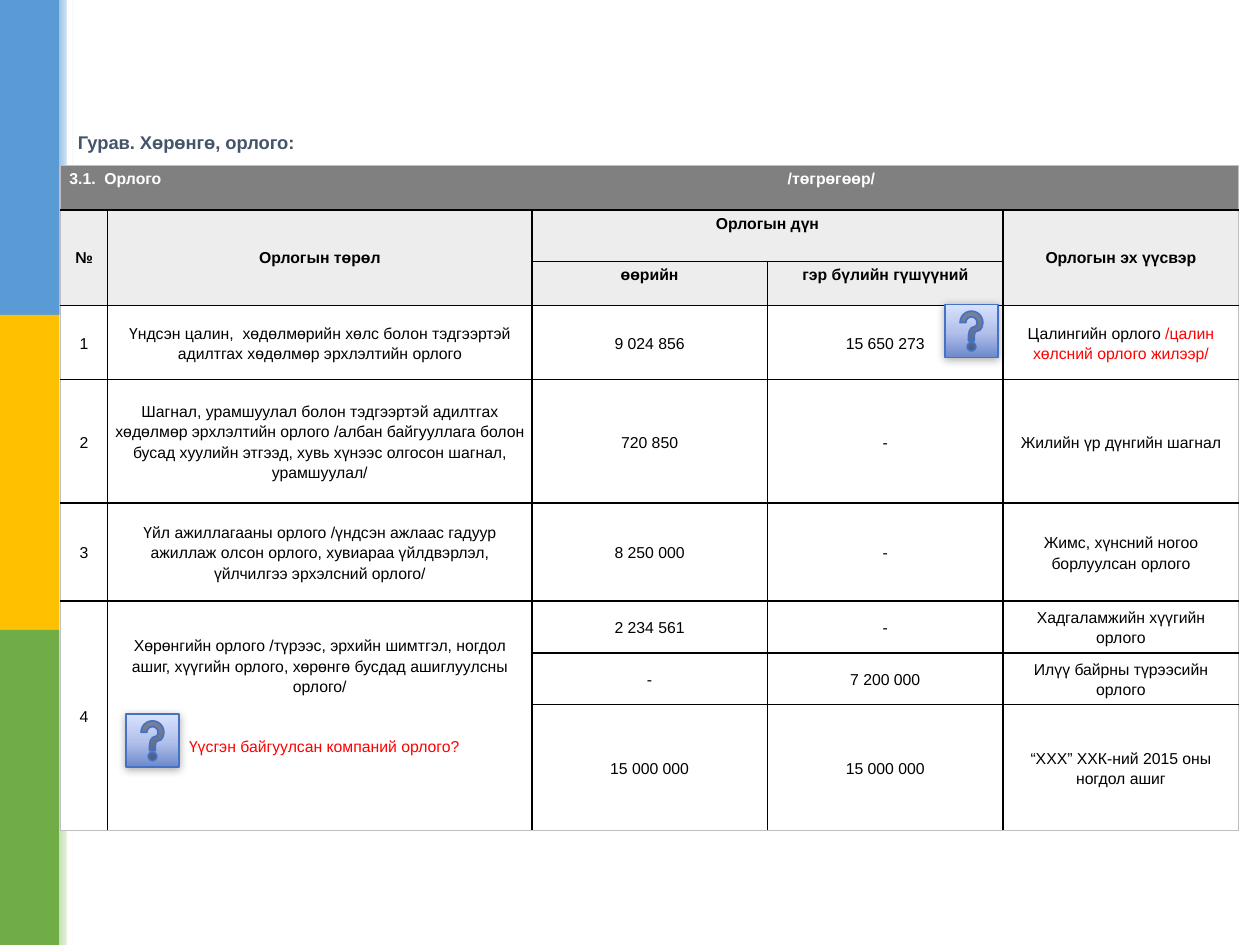
import lxml.etree
import pptx
import pptx.dml.color
import pptx.enum.shapes
import pptx.enum.text
import pptx.oxml.ns
import pptx.util

Cm, Pt = pptx.util.Cm, pptx.util.Pt
RGB = pptx.dml.color.RGBColor.from_string
SHAPE = pptx.enum.shapes.MSO_SHAPE
ALIGN = pptx.enum.text.PP_ALIGN
ANCHOR = pptx.enum.text.MSO_ANCHOR
qn = pptx.oxml.ns.qn

COLORS = {
    "white": "FFFFFF", "black": "000000", "red": "FF0000", "title": "44546A",
    "banner": "808080", "header": "EDEDED", "outer": "BFBFBF", "button": "4472C4",
}


def add_nested(parent, *steps):
    """Append a chain of nested a: elements, each given as (tag, attributes)."""
    for tag, attributes in steps:
        parent = lxml.etree.SubElement(parent, qn("a:" + tag), attributes)
    return parent


def add_block(kind, left, top, width, height, stops, angle=0):
    """Add a shape without line; stops is a list of (percent, hex colour)."""
    block = slide.shapes.add_shape(kind, Cm(left), Cm(top), Cm(width), Cm(height))
    block.shadow.inherit = False
    block.line.fill.background()
    if len(stops) == 1:
        block.fill.solid()
        block.fill.fore_color.rgb = RGB(stops[0][1])
        return block
    block.fill.gradient()
    block.fill.gradient_angle = angle
    stop_list = block.element.spPr.find(".//" + qn("a:gsLst"))
    for old in list(stop_list):
        stop_list.remove(old)
    for percent, color in stops:
        add_nested(stop_list, ("gs", {"pos": str(percent * 1000)}), ("srgbClr", {"val": color}))
    return block


presentation = pptx.Presentation()
presentation.slide_width, presentation.slide_height = Cm(25.4), Cm(19.05)
slide = presentation.slides.add_slide(presentation.slide_layouts[6])

# Coloured side band with its fading edge
BAND_WIDTH, BAND_HEIGHT = 1.19, 6.35
bands = [("5B9BD5", "9DC3E6"), ("FFC000", "FFE699"), ("70AD47", "C5E0B4")]
for index, (strong, pale) in enumerate(bands):
    top = index * BAND_HEIGHT
    add_block(SHAPE.RECTANGLE, 0, top, BAND_WIDTH, BAND_HEIGHT, [(0, strong)])
    add_block(SHAPE.RECTANGLE, BAND_WIDTH, top, 0.3, BAND_HEIGHT,
              [(0, pale), (100, COLORS["white"])])
add_block(SHAPE.RECTANGLE, 1.35, 0, 0.1, 19.05, [(0, COLORS["white"])])

# Section title
section = slide.shapes.add_textbox(Cm(1.32), Cm(2.39), Cm(18.03), Cm(0.97)).text_frame
section.word_wrap = True
section.vertical_anchor = ANCHOR.MIDDLE
section_run = section.paragraphs[0].add_run()
section_run.text = "Гурав. Хөрөнгө, орлого:"
for name, value in {"name": "Arial", "size": Pt(10.5), "bold": True}.items():
    setattr(section_run.font, name, value)
section_run.font.color.rgb = RGB(COLORS["title"])

# Income table
column_widths = [0.95, 8.55, 4.75, 4.75, 4.75]
row_heights = [0.89, 1.04, 0.89, 1.49, 2.49, 1.98, 1.04, 1.04, 2.54]
income_rows = [
    ["3.1.  Орлого\t/төгрөгөөр/", "", "", "", ""],
    ["№", "Орлогын төрөл", "Орлогын дүн", "", "Орлогын эх үүсвэр"],
    ["", "", "өөрийн", "гэр бүлийн гүшүүний", ""],
    ["1", "Үндсэн цалин,  хөдөлмөрийн хөлс болон тэдгээртэй адилтгах хөдөлмөр эрхлэлтийн орлого",
     "9 024 856", "15 650 273", "Цалингийн орлого "],
    ["2", "Шагнал, урамшуулал болон тэдгээртэй адилтгах хөдөлмөр эрхлэлтийн орлого /албан "
     "байгууллага болон бусад хуулийн этгээд, хувь хүнээс олгосон шагнал, урамшуулал/",
     "720 850", "-", "Жилийн үр дүнгийн шагнал"],
    ["3", "Үйл ажиллагааны орлого /үндсэн ажлаас гадуур ажиллаж олсон орлого, хувиараа "
     "үйлдвэрлэл, үйлчилгээ эрхэлсний орлого/",
     "8 250 000", "-", "Жимс, хүнсний ногоо борлуулсан орлого"],
    ["4", "Хөрөнгийн орлого /түрээс, эрхийн шимтгэл, ногдол ашиг, хүүгийн орлого, хөрөнгө "
     "бусдад ашиглуулсны орлого/",
     "2 234 561", "-", "Хадгаламжийн хүүгийн орлого"],
    ["", "", "-", "7 200 000", "Илүү байрны түрээсийн орлого"],
    ["", "", "15 000 000", "15 000 000", "“ХХХ” ХХК-ний 2015 оны ногдол ашиг"],
]
merges = [((0, 0), (0, 4)), ((1, 0), (2, 0)), ((1, 1), (2, 1)), ((1, 2), (1, 3)),
          ((1, 4), (2, 4)), ((6, 0), (8, 0)), ((6, 1), (8, 1))]
header_margins = {"margin_left": Cm(0.18), "margin_right": Cm(0.18),
                  "margin_top": Cm(0.1), "margin_bottom": Cm(0.1)}
body_margins = {"margin_left": Cm(0.15), "margin_right": Cm(0.15),
                "margin_top": 0, "margin_bottom": 0}

income = slide.shapes.add_table(len(row_heights), len(column_widths), Cm(1.22), Cm(3.34),
                                Cm(sum(column_widths)), Cm(sum(row_heights))).table
income.first_row = income.horz_banding = False
for column, width in zip(income.columns, column_widths):
    column.width = Cm(width)
for row, height in zip(income.rows, row_heights):
    row.height = Cm(height)
for first, last in merges:
    income.cell(*first).merge(income.cell(*last))

for r, texts in enumerate(income_rows):
    is_header = r < 3
    for c, text in enumerate(texts):
        cell = income.cell(r, c)
        for name, value in (header_margins if is_header else body_margins).items():
            setattr(cell, name, value)
        centred = not is_header or cell.span_height == 2
        cell.vertical_anchor = ANCHOR.MIDDLE if centred else ANCHOR.TOP
        outer_sides = {"lnL": c == 0, "lnR": c + cell.span_width == len(column_widths),
                       "lnT": r == 0, "lnB": r + cell.span_height == len(row_heights)}
        for side, is_outer in outer_sides.items():
            add_nested(cell._tc.get_or_add_tcPr(),
                       (side, {"w": str(Pt(0.5 if is_outer else 1))}), ("solidFill", {}),
                       ("srgbClr", {"val": COLORS["outer" if is_outer else "black"]}))
        cell.fill.solid()
        fill_name = "banner" if r == 0 else "header" if is_header else "white"
        cell.fill.fore_color.rgb = RGB(COLORS[fill_name])
        paragraph = cell.text_frame.paragraphs[0]
        paragraph.alignment = ALIGN.LEFT if r == 0 else ALIGN.CENTER
        paragraph.line_spacing = 1.0 if is_header else 1.15
        if text:
            run = paragraph.add_run()
            run.text = text
            for name, value in {"name": "Arial", "size": Pt(9), "bold": is_header}.items():
                setattr(run.font, name, value)
            run.font.color.rgb = RGB(COLORS["white" if r == 0 else "black"])

# The currency note stands at a tab stop in the banner
banner_properties = income.cell(0, 0).text_frame.paragraphs[0]._p.get_or_add_pPr()
add_nested(banner_properties, ("tabLst", {}), ("tab", {"pos": str(Cm(14.48)), "algn": "l"}))

# Red remarks: one continues its paragraph, one has its own
company_cell = income.cell(6, 1)
company_cell.margin_bottom = Cm(0.82)
company_remark = company_cell.text_frame.add_paragraph()
for name, value in {"alignment": ALIGN.LEFT, "line_spacing": 1.15,
                    "space_before": Pt(23)}.items():
    setattr(company_remark, name, value)
company_remark._p.get_or_add_pPr().set("marL", str(Cm(1.49)))
remarks = [(income.cell(3, 4).text_frame.paragraphs[0], "/цалин хөлсний орлого жилээр/"),
           (company_remark, "Үүсгэн байгуулсан компаний орлого?")]
for paragraph, text in remarks:
    run = paragraph.add_run()
    run.text = text
    for name, value in {"name": "Arial", "size": Pt(9), "bold": False}.items():
        setattr(run.font, name, value)
    run.font.color.rgb = RGB(COLORS["red"])

# Help buttons
for left, top in [(19.05, 6.14), (2.54, 14.4)]:
    button = add_block(SHAPE.ACTION_BUTTON_HELP, left, top, 1.07, 1.07,
                       [(0, "6D89CB"), (48, "B2C0EA"), (100, "D8E1FE")], 90)
    button.line.color.rgb = RGB(COLORS["button"])
    button.line.width = Pt(1)
    add_nested(button.element.spPr.find(qn("a:effectLst")),
               ("outerShdw", {"blurRad": str(Pt(5)), "dist": str(Pt(1)), "dir": "5400000"}),
               ("srgbClr", {"val": COLORS["black"]}), ("alpha", {"val": "32000"}))

presentation.save("out.pptx")
